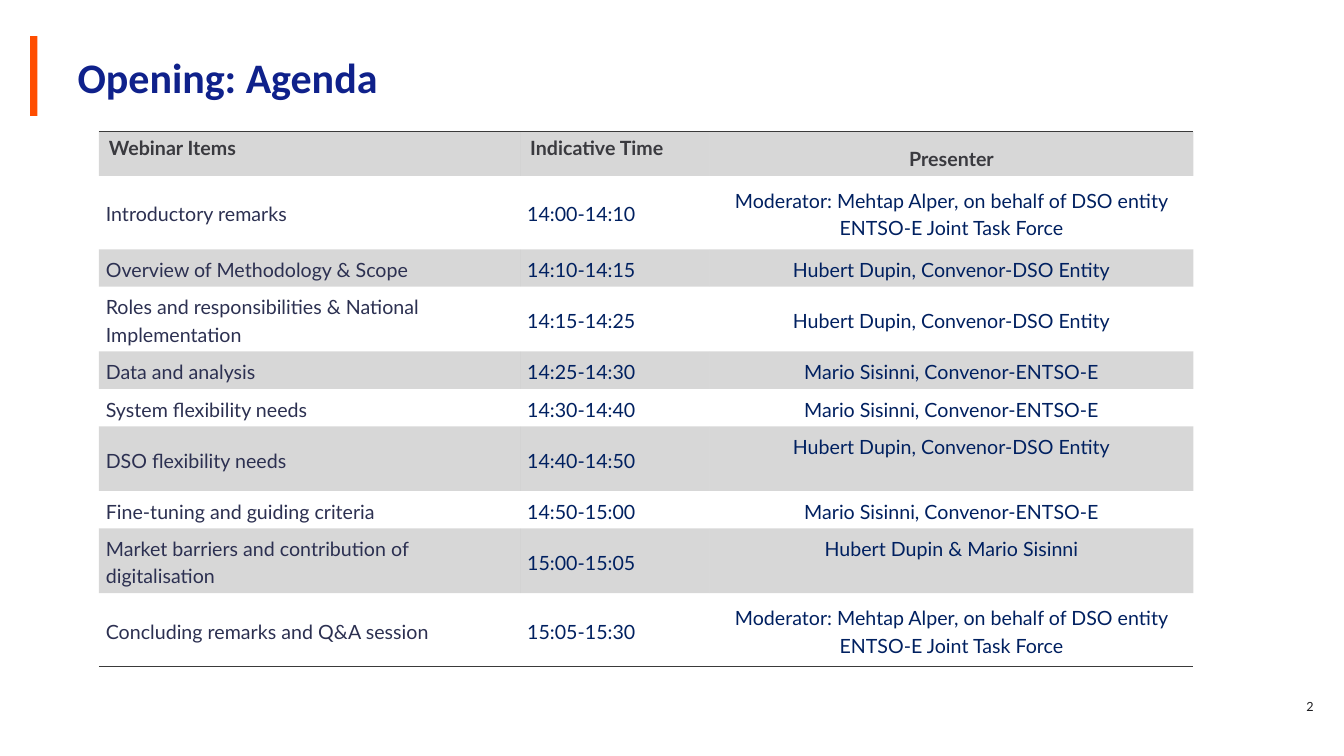
import pptx
import pptx.util
import pptx.dml.color
import pptx.enum.shapes
import pptx.enum.text
import pptx.oxml
import pptx.oxml.ns
from dataclasses import dataclass

ALIGN = pptx.enum.text.PP_ALIGN
ANCHOR = pptx.enum.text.MSO_ANCHOR


@dataclass(frozen=True)
class Theme:
    accent: str = "FF4D00"
    title: str = "0F218B"
    heading: str = "3A3A3F"
    item: str = "2C3051"
    detail: str = "002060"
    band: str = "3A3A3A"
    number: str = "1D1D20"
    title_font: str = "Calibri"
    body_font: str = "Lato"
    title_size: float = 30
    table_size: float = 14
    number_size: float = 9
    rule_width: float = 1
    band_opacity: int = 20


HEADINGS = ("Webinar Items", "Indicative Time", "Presenter")
MODERATOR = "Moderator: Mehtap Alper, on behalf of DSO entity ENTSO-E Joint Task Force"
HUBERT = "Hubert Dupin, Convenor-DSO Entity"
MARIO = "Mario Sisinni, Convenor-ENTSO-E"

# Row heights, in hundredths of the slide's height
HEADER, SINGLE, DOUBLE, TALL = 5.85, 4.95, 8.56, 9.73

# Height, item, time, presenter, anchor of the presenter
AGENDA = (
    (TALL, "Introductory remarks", "14:00-14:10", MODERATOR, ANCHOR.MIDDLE),
    (SINGLE, "Overview of Methodology & Scope", "14:10-14:15", HUBERT, ANCHOR.MIDDLE),
    (DOUBLE, "Roles and responsibilities & National Implementation", "14:15-14:25",
     HUBERT, ANCHOR.MIDDLE),
    (SINGLE, "Data and analysis", "14:25-14:30", MARIO, ANCHOR.MIDDLE),
    (SINGLE, "System flexibility needs", "14:30-14:40", MARIO, ANCHOR.MIDDLE),
    (DOUBLE, "DSO flexibility needs", "14:40-14:50", HUBERT, ANCHOR.TOP),
    (SINGLE, "Fine-tuning and guiding criteria", "14:50-15:00", MARIO, ANCHOR.MIDDLE),
    (DOUBLE, "Market barriers and contribution of digitalisation", "15:00-15:05",
     "Hubert Dupin & Mario Sisinni", ANCHOR.TOP),
    (TALL, "Concluding remarks and Q&A session", "15:05-15:30", MODERATOR, ANCHOR.MIDDLE),
)


def rgb(color):
    return pptx.dml.color.RGBColor.from_string(color)


def write(frame, text, *, font, size, color, bold=False, align=ALIGN.LEFT, spacing=None):
    frame.word_wrap = True
    paragraph = frame.paragraphs[0]
    paragraph.alignment = align
    if spacing:
        paragraph.line_spacing = pptx.util.Pt(spacing)
    run = paragraph.add_run()
    run.text = text
    run.font.name = font
    run.font.size = pptx.util.Pt(size)
    run.font.bold = bold
    run.font.color.rgb = rgb(color)


class SlideBuilder:
    """Places elements on a grid of 100 columns by 100 rows."""

    def __init__(self, deck, theme):
        self.theme = theme
        self.slide = deck.slides.add_slide(deck.slide_layouts[6])
        self.column = deck.slide_width / 100
        self.row = deck.slide_height / 100

    def area(self, left, top, width, height):
        return (round(left * self.column), round(top * self.row),
                round(width * self.column), round(height * self.row))

    def bar(self, *place):
        bar = self.slide.shapes.add_shape(
            pptx.enum.shapes.MSO_SHAPE.RECTANGLE, *self.area(*place))
        bar.shadow.inherit = False
        bar.fill.solid()
        bar.fill.fore_color.rgb = rgb(self.theme.accent)
        bar.line.fill.background()

    def text(self, text, *place, anchor=ANCHOR.TOP, **style):
        frame = self.slide.shapes.add_textbox(*self.area(*place)).text_frame
        frame.vertical_anchor = anchor
        write(frame, text, **style)

    def table(self, left, top, widths, heights):
        """Add an unstyled table without grid lines."""
        place = self.area(left, top, sum(widths), sum(heights))
        table = self.slide.shapes.add_table(len(heights), len(widths), *place).table
        table.horz_banding = False
        style = table._tbl.tblPr.find(pptx.oxml.ns.qn("a:tableStyleId"))
        style.text = "{2D5ABB26-0587-4C30-8999-92F81FD0307C}"
        for column, width in zip(table.columns, widths):
            column.width = round(width * self.column)
        for row, height in zip(table.rows, heights):
            row.height = round(height * self.row)
        return table

    def cell(self, cell, text, *, banded, rule=None, anchor=ANCHOR.TOP, inset=0.07, **style):
        cell.margin_left = cell.margin_right = pptx.util.Inches(inset)
        cell.margin_top = cell.margin_bottom = pptx.util.Inches(0.05)
        cell.vertical_anchor = anchor
        write(cell.text_frame, text, font=self.theme.body_font,
              size=self.theme.table_size, **style)
        if banded:
            self.band(cell)
        else:
            cell.fill.background()
        if rule:
            self.rule(cell, rule)

    def band(self, cell):
        cell.fill.solid()
        cell.fill.fore_color.rgb = rgb(self.theme.band)
        color = cell._tc.tcPr.find(".//" + pptx.oxml.ns.qn("a:srgbClr"))
        color.append(pptx.oxml.parse_xml(
            f'<a:alpha {pptx.oxml.ns.nsdecls("a")} val="{self.theme.band_opacity * 1000}"/>'))

    def rule(self, cell, edge):
        """Draw a line on one edge of a cell: lnT or lnB."""
        width = pptx.util.Pt(self.theme.rule_width)
        cell._tc.tcPr.insert(0, pptx.oxml.parse_xml(
            f'<a:{edge} {pptx.oxml.ns.nsdecls("a")} w="{width}"><a:solidFill>'
            f'<a:srgbClr val="{self.theme.band}"/></a:solidFill></a:{edge}>'))

    def agenda(self, left, top, widths):
        theme = self.theme
        table = self.table(left, top, widths, [HEADER] + [entry[0] for entry in AGENDA])
        for column, heading in enumerate(HEADINGS):
            presenter = column == 2
            self.cell(table.cell(0, column), heading, banded=True, rule="lnT",
                      color=theme.heading, bold=True,
                      inset=0.07 if presenter else 0.1,
                      align=ALIGN.CENTER if presenter else ALIGN.LEFT,
                      spacing=24 if presenter else None)
        for row, (_, item, time, presenter, anchor) in enumerate(AGENDA, start=1):
            shared = dict(banded=row % 2 == 0, spacing=19.5,
                          rule="lnB" if row == len(AGENDA) else None)
            self.cell(table.cell(row, 0), item, color=theme.item,
                      anchor=ANCHOR.MIDDLE, **shared)
            self.cell(table.cell(row, 1), time, color=theme.detail,
                      anchor=ANCHOR.MIDDLE, **shared)
            self.cell(table.cell(row, 2), presenter, color=theme.detail,
                      anchor=anchor, align=ALIGN.CENTER, **shared)


def main():
    deck = pptx.Presentation()
    deck.slide_width = pptx.util.Inches(13.33)
    deck.slide_height = pptx.util.Inches(7.5)
    theme = Theme()
    opening = SlideBuilder(deck, theme)
    opening.text("2", 50.63, 90.93, 47.85, 5.33, anchor=ANCHOR.MIDDLE,
                 font=theme.body_font, size=theme.number_size, color=theme.number,
                 align=ALIGN.RIGHT, spacing=9)
    opening.bar(2.25, 4.8, 0.53, 10.53)
    opening.text("Opening: Agenda", 5.03, 6.93, 94.9, 13.6,
                 font=theme.title_font, size=theme.title_size, color=theme.title,
                 bold=True, spacing=32)
    opening.agenda(7.35, 17.4, (31.35, 14.1, 36))
    deck.save("out.pptx")


if __name__ == "__main__":
    main()
